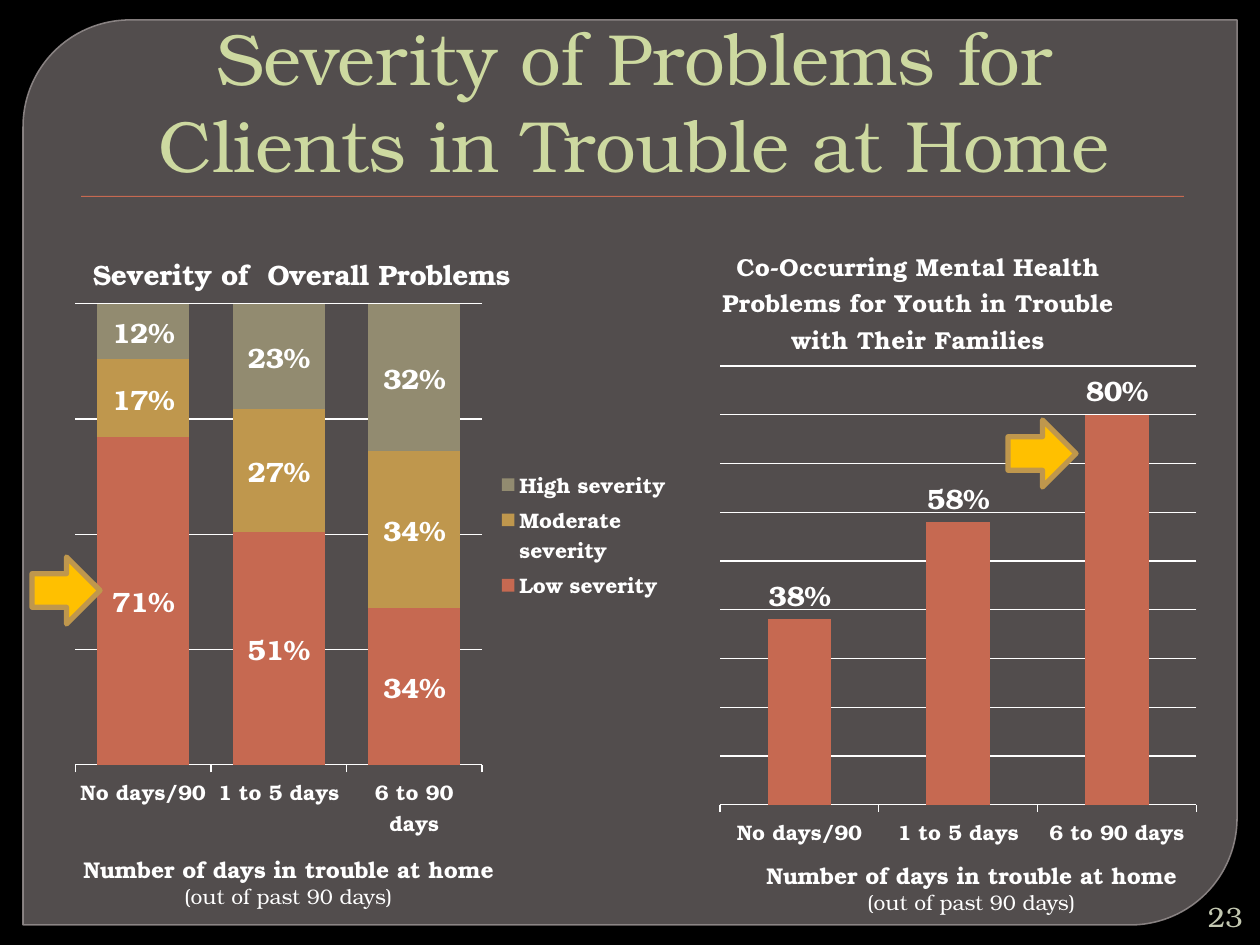
from lxml import etree
from pptx import Presentation
from pptx.chart.data import CategoryChartData
from pptx.dml.color import RGBColor
from pptx.enum.chart import (XL_CHART_TYPE, XL_LABEL_POSITION, XL_LEGEND_POSITION,
                             XL_TICK_LABEL_POSITION, XL_TICK_MARK)
from pptx.enum.shapes import MSO_SHAPE
from pptx.enum.text import MSO_ANCHOR, PP_ALIGN
from pptx.oxml import parse_xml
from pptx.oxml.ns import nsdecls, qn
from pptx.util import Emu, Pt

CLUSTERED = XL_CHART_TYPE.COLUMN_CLUSTERED
STACKED = XL_CHART_TYPE.COLUMN_STACKED_100
CENTER, RIGHT = PP_ALIGN.CENTER, PP_ALIGN.RIGHT
TOP, MIDDLE, BOTTOM = MSO_ANCHOR.TOP, MSO_ANCHOR.MIDDLE, MSO_ANCHOR.BOTTOM

BLACK = RGBColor(0x00, 0x00, 0x00)
WHITE = RGBColor(0xFF, 0xFF, 0xFF)
PANEL = RGBColor(0x7E, 0x77, 0x77)
PANEL_EDGE = RGBColor(0x94, 0x8D, 0x8D)
TITLE_GREEN = RGBColor(0xCD, 0xD9, 0xA0)
NUMBER_GREEN = RGBColor(0xC3, 0xC8, 0xB1)
RUST = RGBColor(0xC6, 0x69, 0x51)
GOLD = RGBColor(0xBF, 0x97, 0x4D)
OLIVE = RGBColor(0x92, 0x8B, 0x70)
YELLOW = RGBColor(0xFF, 0xC0, 0x00)

FONT = "TeX Gyre Bonum"
DAYS = ("No days/90", "1 to 5 days", "6 to 90 days")


def px(length):
    """Turn pixels (126 to the inch) into EMU."""
    return Emu(round(length * 914400 / 126))


def box(*lengths):
    return [px(length) for length in lengths]


def style_font(font, size, color=WHITE, bold=False):
    font.name, font.size, font.bold = FONT, Pt(size), bold
    font.color.rgb = color


def set_opacity(color_format_owner, percent):
    """Add an alpha value to the solid colour below a shape's fill or line element."""
    color = color_format_owner.find(qn("a:solidFill"))[0]
    etree.SubElement(color, qn("a:alpha")).set("val", str(percent * 1000))


def add_filled_shape(slide, kind, bounds, fill, edge=None, edge_width=0):
    shape = slide.shapes.add_shape(kind, *box(*bounds))
    shape.shadow.inherit = False
    shape.fill.solid()
    shape.fill.fore_color.rgb = fill
    if edge is None:
        shape.line.fill.background()
    else:
        shape.line.color.rgb = edge
        shape.line.width = Pt(edge_width)
    return shape


def add_panel(slide):
    panel = add_filled_shape(slide, MSO_SHAPE.ROUND_2_DIAG_RECTANGLE,
                             (23, 20, 1214, 905), PANEL, PANEL_EDGE, 0.87)
    panel.adjustments[0], panel.adjustments[1] = 0.118, 0
    properties = panel.element.spPr
    set_opacity(properties, 65)
    set_opacity(properties.find(qn("a:ln")), 88)


def add_text(slide, bounds, lines, align=CENTER, anchor=TOP):
    """Write one paragraph for each (text, size, color, bold) line."""
    frame = slide.shapes.add_textbox(*box(*bounds)).text_frame
    frame.word_wrap = True
    frame.vertical_anchor = anchor
    frame.text = "\n".join(line[0] for line in lines)
    for paragraph, (_, size, color, bold) in zip(frame.paragraphs, lines):
        paragraph.alignment = align
        style_font(paragraph.runs[0].font, size, color, bold)
    return frame


def add_axis_caption(slide, left, top):
    add_text(slide, (left, top, 451, 68),
             [("Number of days in trouble at home", 13, WHITE, True),
              ("(out of past 90 days)", 12, WHITE, False)])


def manual_layout(x, y, width=None, height=None):
    inner = '<c:layoutTarget val="inner"/>' if width else ""
    size = f'<c:w val="{width}"/><c:h val="{height}"/>' if width else ""
    return parse_xml(
        f'<c:layout {nsdecls("c")}><c:manualLayout>{inner}'
        '<c:xMode val="edge"/><c:yMode val="edge"/>'
        f'<c:x val="{x}"/><c:y val="{y}"/>{size}</c:manualLayout></c:layout>')


def place_plot(chart, layout):
    plot_area = chart.element.chart.plotArea
    for old in plot_area.findall(qn("c:layout")):
        plot_area.remove(old)
    plot_area.insert(0, manual_layout(*layout))


def place_title(chart, x, y):
    title = chart.chart_title.element if hasattr(chart.chart_title, "element") \
        else chart.element.chart.find(qn("c:title"))
    for old in title.findall(qn("c:layout")):
        title.remove(old)
    title.find(qn("c:tx")).addnext(manual_layout(x, y))


def style_axes(chart, maximum, step):
    days, share = chart.category_axis, chart.value_axis
    days.major_tick_mark = XL_TICK_MARK.OUTSIDE
    days.tick_label_position = XL_TICK_LABEL_POSITION.LOW
    style_font(days.tick_labels.font, 12, bold=True)
    share.visible = False
    share.minimum_scale, share.maximum_scale, share.major_unit = 0, maximum, step
    share.has_major_gridlines = True
    for line in (days.format.line, share.major_gridlines.format.line):
        line.color.rgb = WHITE
        line.width = Pt(0.75)


def add_column_chart(slide, kind, bounds, title, title_size, series, gap, maximum, step, plot):
    """Draw columns for (name, values, color) series over the day groups."""
    data = CategoryChartData(number_format="0%")
    data.categories = DAYS
    for name, values, _ in series:
        data.add_series(name, values)
    chart = slide.shapes.add_chart(kind, *box(*bounds), data).chart
    style_font(chart.font, 10)
    chart.has_legend = False
    chart.has_title = True
    heading = chart.chart_title.text_frame
    heading.text = title
    style_font(heading.paragraphs[0].runs[0].font, title_size, bold=True)
    style_axes(chart, maximum, step)
    place_plot(chart, plot)

    columns = chart.plots[0]
    columns.gap_width = gap
    columns.vary_by_categories = False
    columns.overlap = 100 if kind == STACKED else 0
    for column, (_, _, color) in zip(columns.series, series):
        column.format.fill.solid()
        column.format.fill.fore_color.rgb = color
        labels = column.data_labels
        labels.show_value = True
        labels.number_format, labels.number_format_is_linked = "0%", False
        labels.position = (XL_LABEL_POSITION.CENTER if kind == STACKED
                           else XL_LABEL_POSITION.OUTSIDE_END)
        style_font(labels.font, 16, bold=True)
    return chart


def add_severity_legend(chart):
    chart.has_legend = True
    chart.legend.position = XL_LEGEND_POSITION.RIGHT
    chart.legend.include_in_layout = False
    style_font(chart.legend.font, 12, bold=True)


def main():
    deck = Presentation()
    deck.slide_width, deck.slide_height = box(1260, 945)
    slide = deck.slides.add_slide(deck.slide_layouts[6])
    slide.background.fill.solid()
    slide.background.fill.fore_color.rgb = BLACK

    add_panel(slide)
    add_filled_shape(slide, MSO_SHAPE.RECTANGLE, (81, 196, 1103, 1), RUST)
    heading = add_text(slide, (63, 35, 1134, 158),
                       [("Severity of Problems for Clients in Trouble at Home",
                         41.4, TITLE_GREEN, False)], anchor=BOTTOM)
    heading.paragraphs[0]._p.get_or_add_pPr().set("marL", str(px(8)))

    add_column_chart(
        slide, CLUSTERED, (640, 220, 557, 655),
        "Co-Occurring Mental Health Problems for Youth in Trouble with Their Families", 14,
        [("Series 1", (0.38, 0.58, 0.8), RUST)],
        gap=150, maximum=0.9, step=0.1, plot=(0.144, 0.223, 0.856, 0.67))
    severity = add_column_chart(
        slide, STACKED, (63, 220, 620, 630), "Severity of  Overall Problems", 16,
        [("Low severity", (0.71, 0.51, 0.34), RUST),
         ("Moderate severity", (0.17, 0.27, 0.34), GOLD),
         ("High severity", (0.12, 0.23, 0.32), OLIVE)],
        gap=47, maximum=1, step=0.25, plot=(0.02, 0.133, 0.656, 0.732))
    place_title(severity, 0.04, 0.04)
    add_severity_legend(severity)

    add_text(slide, (1191, 897, 64, 38), [("23", 16, NUMBER_GREEN, False)], RIGHT, MIDDLE)
    add_axis_caption(slide, 63, 850)
    add_axis_caption(slide, 746, 856)
    for left, top in ((32, 557), (1008, 420)):
        add_filled_shape(slide, MSO_SHAPE.RIGHT_ARROW, (left, top, 68, 67), YELLOW, GOLD, 3)

    deck.save("out.pptx")


if __name__ == "__main__":
    main()
